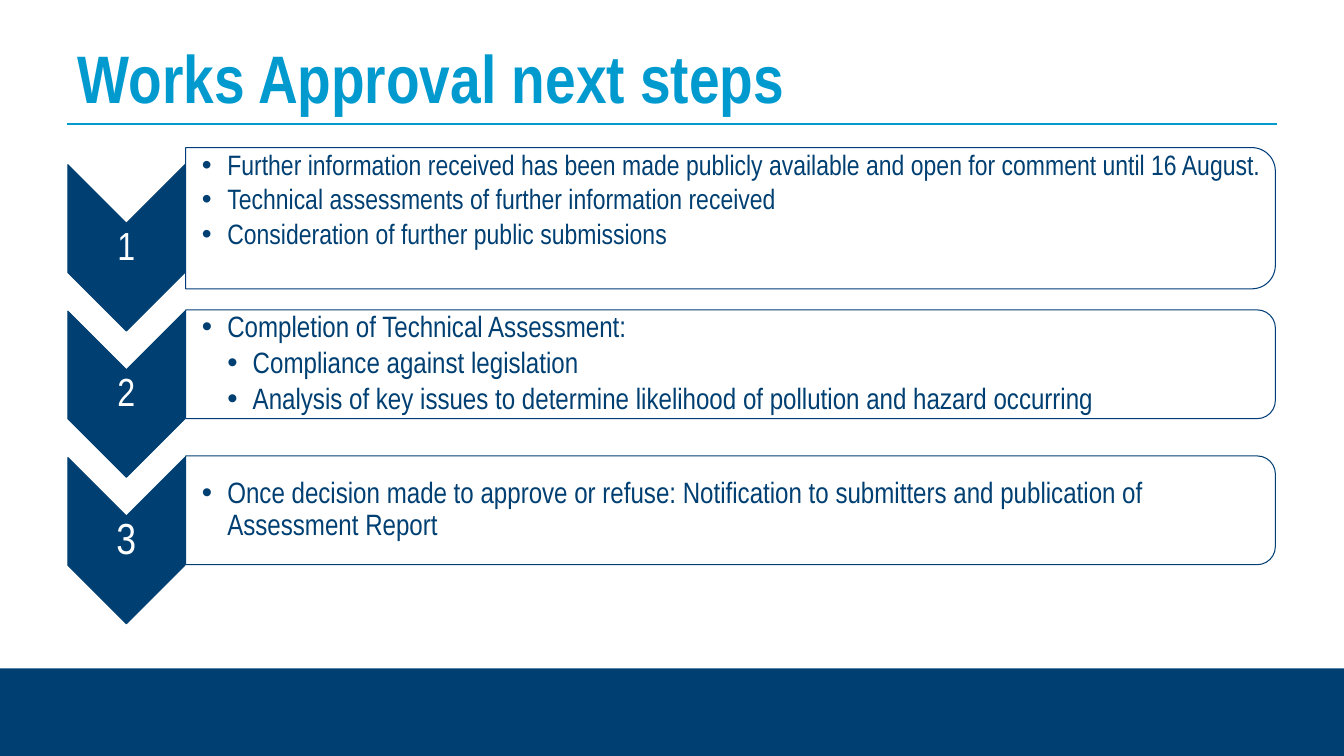
from lxml import etree
from pptx import Presentation
from pptx import util as u
from pptx.dml.color import RGBColor
from pptx.enum import shapes, text
from pptx.oxml.ns import qn

COLOURS = {"navy": "003F72", "edge": "003C79", "sky": "009ACF", "white": "FFFFFF"}
FONT = "Arial Narrow"
FIRST_CHEVRON_TOP = 4.15
STEP_PITCH = 3.69
CHEVRON_LEFT, CHEVRON_WIDTH, CHEVRON_LENGTH = 1.71, 2.95, 4.19
PANEL_LEFT, PANEL_WIDTH = 4.68, 27.46

STEPS = [
    {"number_size": 28, "size": 20, "panel": (3.72, 3.56), "words": (3.78, 2.6),
     "anchor": text.MSO_ANCHOR.TOP, "edge": "edge",
     "points": [
         (0, "Further information received has been made publicly available "
             "and open for comment until 16 August."),
         (0, "Technical assessments of further information received"),
         (0, "Consideration of further public submissions")]},
    {"number_size": 28, "size": 21, "panel": (7.81, 2.74), "words": (7.95, 2.46),
     "anchor": text.MSO_ANCHOR.MIDDLE, "edge": "edge",
     "points": [
         (0, "Completion of Technical Assessment:"),
         (1, "Compliance against legislation"),
         (1, "Analysis of key issues to determine likelihood of pollution "
             "and hazard occurring")]},
    {"number_size": 31, "size": 21, "panel": (11.49, 2.74), "words": (11.63, 2.46),
     "anchor": text.MSO_ANCHOR.MIDDLE, "edge": "navy",
     "points": [
         (0, "Once decision made to approve or refuse: Notification to submitters "
             "and publication of Assessment Report")]},
]


def colour(name):
    return RGBColor.from_string(COLOURS[name])


def add_run(paragraph, words, size, shade, bold=False):
    run = paragraph.add_run()
    run.text = words
    run.font.name = FONT
    run.font.size = u.Pt(size)
    run.font.bold = bold
    run.font.color.rgb = colour(shade)


def add_panel(slide, kind, left, top, width, height, fill=None, edge=None, turned=False):
    if turned:
        left, top = left + (width - height) / 2, top + (height - width) / 2
        width, height = height, width
    panel = slide.shapes.add_shape(kind, u.Cm(left), u.Cm(top), u.Cm(width), u.Cm(height))
    panel.shadow.inherit = False
    panel.rotation = 90 if turned else 0
    if fill:
        panel.fill.solid()
        panel.fill.fore_color.rgb = colour(fill)
    else:
        panel.fill.background()
    if edge:
        panel.line.color.rgb = colour(edge)
        panel.line.width = u.Pt(0.75)
    else:
        panel.line.fill.background()


def add_words(slide, left, top, width, height, anchor, left_inset, inset):
    box = slide.shapes.add_textbox(u.Cm(left), u.Cm(top), u.Cm(width), u.Cm(height))
    frame = box.text_frame
    frame.word_wrap = True
    frame.vertical_anchor = anchor
    frame.margin_left = u.Cm(left_inset)
    frame.margin_top = frame.margin_right = frame.margin_bottom = u.Cm(inset)
    return frame


def set_bullet(paragraph, level):
    paragraph.level = level
    properties = paragraph._p.get_or_add_pPr()
    properties.set("marL", str(u.Cm(0.64 * (level + 1))))
    properties.set("indent", str(u.Cm(-0.64)))
    etree.SubElement(properties, qn("a:buFont")).set("typeface", "Arial")
    etree.SubElement(properties, qn("a:buChar")).set("char", "•")


def add_title(slide, words):
    title = slide.shapes.title
    title.left, title.top = u.Cm(1.7), u.Cm(0.76)
    title.width, title.height = u.Cm(30.48), u.Cm(2.36)
    title.text_frame.vertical_anchor = text.MSO_ANCHOR.MIDDLE
    heading = title.text_frame.paragraphs[0]
    heading.alignment = text.PP_ALIGN.LEFT
    add_run(heading, words, 48, "sky", bold=True)


def add_title_rule(slide):
    rule = slide.shapes.add_connector(
        shapes.MSO_CONNECTOR.STRAIGHT, u.Cm(1.7), u.Cm(3.12), u.Cm(32.18), u.Cm(3.12))
    rule.line.color.rgb = colour("sky")
    rule.line.width = u.Pt(1.5)
    etree.SubElement(rule._element.spPr, qn("a:effectLst"))


def add_step(slide, index, step):
    chevron_top = FIRST_CHEVRON_TOP + index * STEP_PITCH
    add_panel(slide, shapes.MSO_SHAPE.CHEVRON, CHEVRON_LEFT, chevron_top,
              CHEVRON_WIDTH, CHEVRON_LENGTH, fill="navy", edge="navy", turned=True)
    number = add_words(slide, CHEVRON_LEFT, chevron_top + 1.46, CHEVRON_WIDTH, 1.27,
                       text.MSO_ANCHOR.MIDDLE, 0.05, 0.05).paragraphs[0]
    number.alignment = text.PP_ALIGN.CENTER
    number.line_spacing = 0.9
    add_run(number, str(index + 1), step["number_size"], "white")

    panel_top, panel_height = step["panel"]
    add_panel(slide, shapes.MSO_SHAPE.ROUND_2_SAME_RECTANGLE, PANEL_LEFT, panel_top,
              PANEL_WIDTH, panel_height, edge=step["edge"], turned=True)
    words_top, words_height = step["words"]
    frame = add_words(slide, PANEL_LEFT, words_top, 27.3, words_height,
                      step["anchor"], 0.41, 0.03)
    for order, (level, words) in enumerate(step["points"]):
        point = frame.add_paragraph() if order else frame.paragraphs[0]
        set_bullet(point, level)
        point.line_spacing = 0.9
        point.space_after = u.Pt(3)
        add_run(point, words, step["size"], "navy")


def main():
    deck = Presentation()
    deck.slide_width, deck.slide_height = u.Cm(33.87), u.Cm(19.05)
    slide = deck.slides.add_slide(deck.slide_layouts[5])
    add_panel(slide, shapes.MSO_SHAPE.RECTANGLE, 0, 16.84, 33.87, 2.21, fill="navy")
    add_title_rule(slide)
    add_title(slide, "Works Approval next steps")
    for index, step in enumerate(STEPS):
        add_step(slide, index, step)
    deck.save("out.pptx")


if __name__ == "__main__":
    main()
